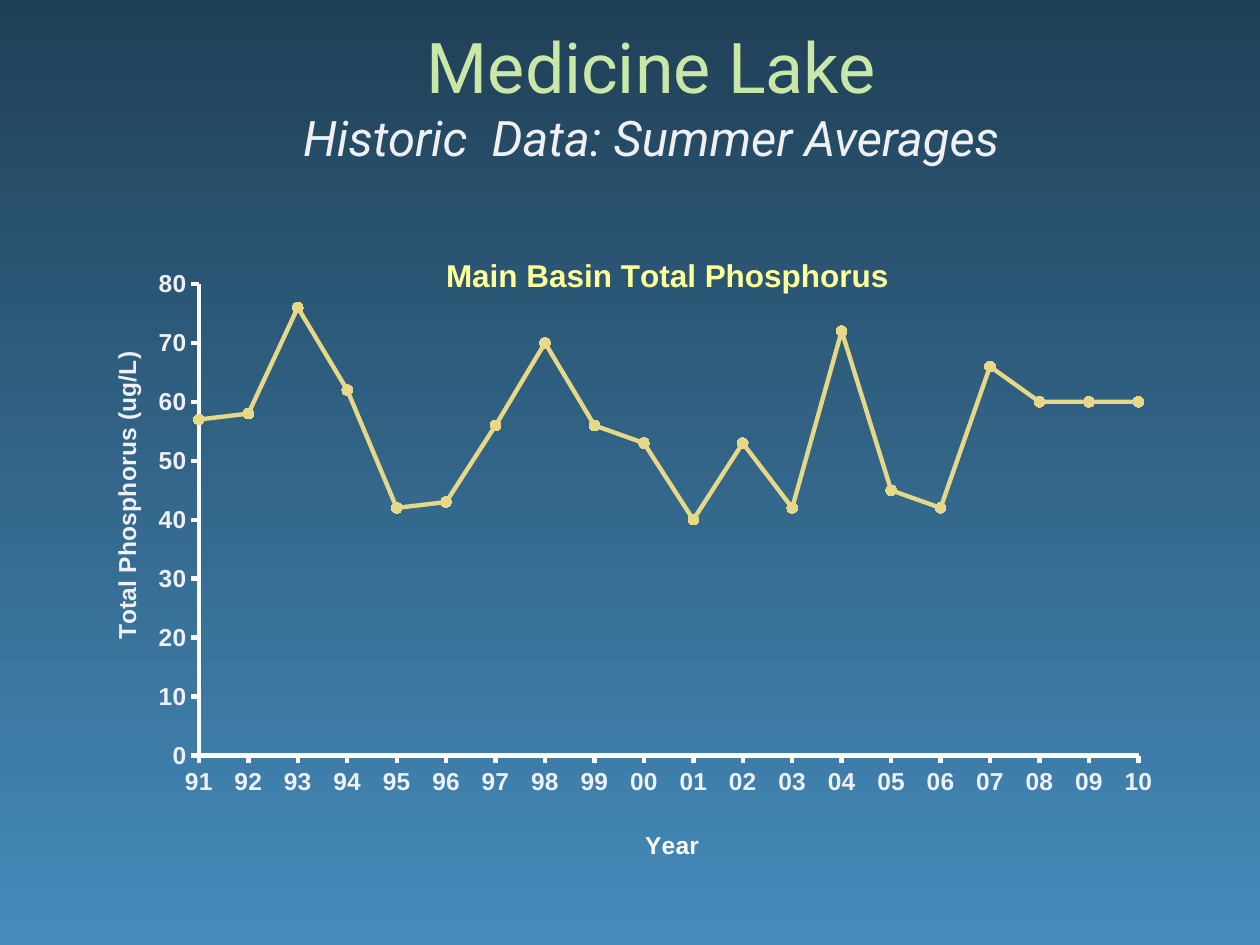
from lxml import etree
from pptx import Presentation
from pptx.chart.data import XyChartData
from pptx.dml.color import RGBColor
from pptx.enum.chart import XL_CHART_TYPE, XL_MARKER_STYLE, XL_TICK_MARK
from pptx.enum.text import MSO_ANCHOR, PP_ALIGN
from pptx.oxml.ns import qn
from pptx.util import Cm, Pt

SCATTER = XL_CHART_TYPE.XY_SCATTER_LINES
CIRCLE = XL_MARKER_STYLE.CIRCLE
TICK_OUT = XL_TICK_MARK.OUTSIDE
TICK_NONE = XL_TICK_MARK.NONE
MIDDLE = MSO_ANCHOR.MIDDLE
CENTER = PP_ALIGN.CENTER

PHOSPHORUS = [57, 58, 76, 62, 42, 43, 56, 70, 56, 53,
              40, 53, 42, 72, 45, 42, 66, 60, 60, 60]
FIRST_DAY = 33420  # serial date of 1 July 1991
LAST_DAY = 40360
YEAR_DAYS = 365


def color(hex_text):
    return RGBColor.from_string(hex_text)


def style_font(font, name, size, hex_text, bold=False, italic=False):
    font.name = name
    font.size = Pt(size)
    font.bold = bold
    font.italic = italic
    font.color.rgb = color(hex_text)


def style_line(line, hex_text, width=2.5):
    line.color.rgb = color(hex_text)
    line.width = Pt(width)


def place_manually(element, index, **fractions):
    """Give a chart part a fixed layout, in fractions of the chart."""
    for old in element.findall(qn("c:layout")):
        element.remove(old)
    layout = etree.Element(qn("c:layout"))
    manual = etree.SubElement(layout, qn("c:manualLayout"))
    if "w" in fractions:
        etree.SubElement(manual, qn("c:layoutTarget"), val="inner")
    for mode in ("xMode", "yMode"):
        etree.SubElement(manual, qn(f"c:{mode}"), val="edge")
    for key, value in fractions.items():
        etree.SubElement(manual, qn(f"c:{key}"), val=str(value))
    element.insert(index, layout)


class LakeSlide:
    """The style of the deck and the page being filled."""
    heading_font = "Roboto"
    chart_font = "Arial"
    heading = "C9E7A7"
    pale = "EEF0F3"
    white = "FFFFFF"
    chart_heading = "FFFF99"
    series_color = "E6D886"
    marker_color = "D3D050"

    def __init__(self, deck):
        self.page = deck.slides.add_slide(deck.slide_layouts[6])

    def background(self, top, bottom):
        fill = self.page.background.fill
        fill.gradient()
        fill.gradient_angle = 270
        for stop, position, shade in zip(fill.gradient_stops, (0, 1), (top, bottom)):
            stop.position = position
            stop.color.rgb = color(shade)

    def title(self, name, subtitle):
        box = self.page.shapes.add_textbox(Cm(1.7), Cm(0.43), Cm(22.86), Cm(2.97))
        frame = box.text_frame
        frame.word_wrap = True
        frame.vertical_anchor = MIDDLE
        para = frame.paragraphs[0]
        para.text = f"{name}\v{subtitle}"
        para.alignment = CENTER
        name_span, subtitle_span = para.runs
        style_font(name_span.font, self.heading_font, 40, self.heading)
        style_font(subtitle_span.font, self.heading_font, 28, self.pale, italic=True)

    def chart_text(self, title, text, size, shade, x, y):
        title.text_frame.text = text
        span = title.text_frame.paragraphs[0].runs[0]
        style_font(span.font, self.chart_font, size, shade, bold=True)
        place_manually(title._element, 1, x=x, y=y)

    def axis(self, axis, limits, step, number_format):
        axis.minimum_scale, axis.maximum_scale = limits
        axis.major_unit = step
        axis.has_major_gridlines = False
        axis.major_tick_mark = TICK_OUT
        axis.minor_tick_mark = TICK_NONE
        style_line(axis.format.line, self.white)
        labels = axis.tick_labels
        labels.number_format = number_format
        labels.number_format_is_linked = False
        style_font(labels.font, self.chart_font, 14, self.pale, bold=True)

    def phosphorus_chart(self):
        data = XyChartData()
        points = data.add_series("Total Phosphorus")
        for year, value in enumerate(PHOSPHORUS):
            points.add_data_point(FIRST_DAY + year * YEAR_DAYS, value)
        chart = self.page.shapes.add_chart(
            SCATTER, Cm(1.7), Cm(3.6), Cm(22.43), Cm(14.17), data).chart
        chart.has_legend = False
        style_font(chart.font, self.chart_font, 12, "000000", bold=True)

        days, amounts = chart.category_axis, chart.value_axis
        self.axis(days, (FIRST_DAY, LAST_DAY), YEAR_DAYS, "yy")
        self.axis(amounts, (0, 80), 10, "0")
        self.chart_text(chart.chart_title, "Main Basin Total Phosphorus",
                        18, self.chart_heading, 0.32, 0.1)
        self.chart_text(days.axis_title, "Year", 14, self.white, 0.5, 0.92)
        self.chart_text(amounts.axis_title, "Total Phosphorus (ug/L)",
                        14, self.pale, 0.02, 0.24)
        plot_area = chart._chartSpace.chart.plotArea
        place_manually(plot_area, 0, x=0.103, y=0.15, w=0.845, h=0.671)

        plot = chart.plots[0]
        plot.vary_by_categories = False
        series = plot.series[0]
        series.smooth = False
        style_line(series.format.line, self.series_color)
        marker = series.marker
        marker.style = CIRCLE
        marker.size = 6
        marker.format.fill.solid()
        marker.format.fill.fore_color.rgb = color(self.marker_color)
        style_line(marker.format.line, self.series_color, 1)


def main():
    deck = Presentation()
    deck.slide_width, deck.slide_height = Cm(25.4), Cm(19.05)
    slide = LakeSlide(deck)
    slide.background("204057", "458BBB")
    slide.title("Medicine Lake", "Historic  Data: Summer Averages")
    slide.phosphorus_chart()
    deck.save("out.pptx")


if __name__ == "__main__":
    main()
